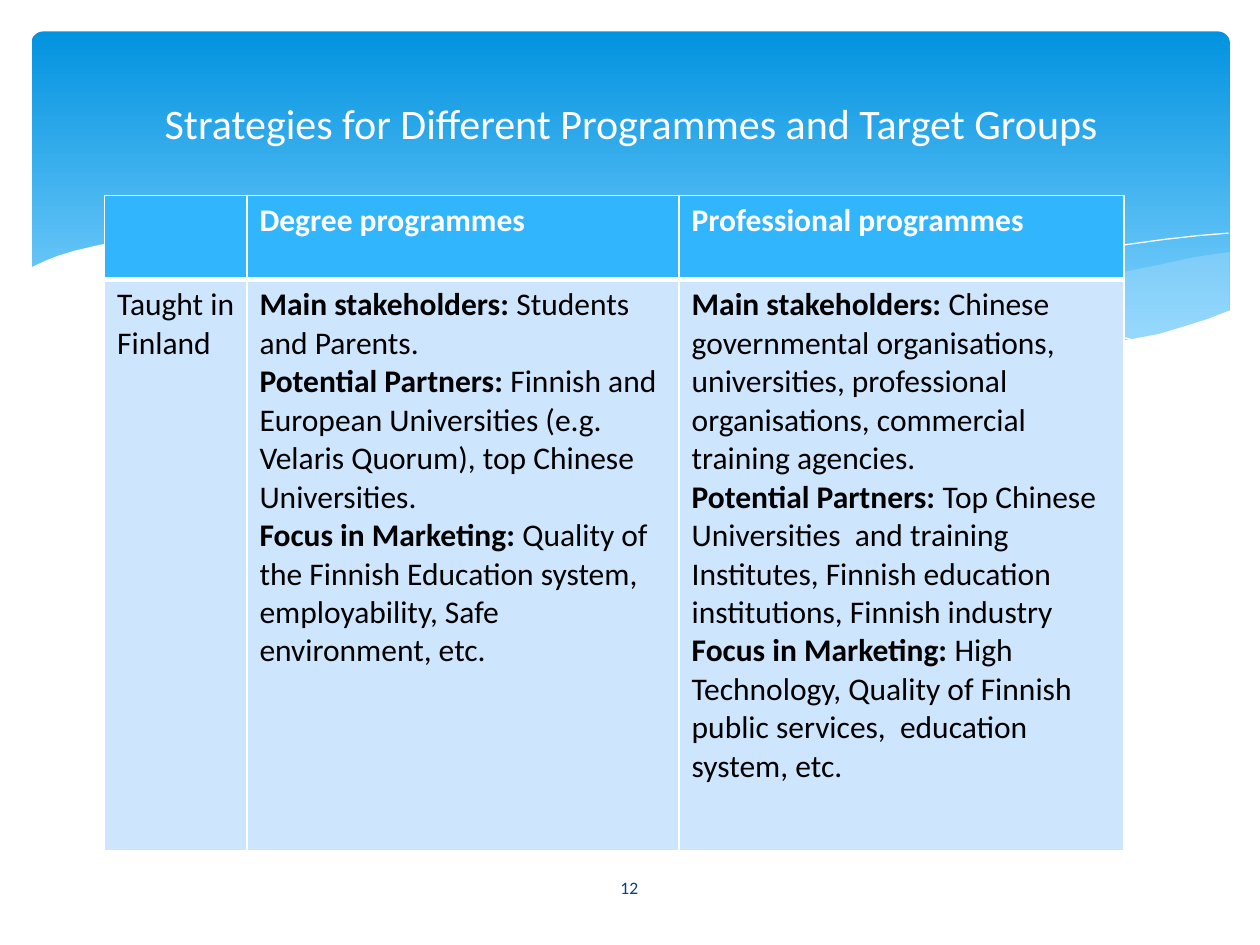
import pptx
import pptx.util
import pptx.dml.color
import pptx.enum.shapes
import pptx.enum.text
import pptx.oxml
import pptx.oxml.ns
from pptx.util import Inches, Pt

COLORS = {
    "white": "FFFFFF", "black": "000000", "navy": "073E87", "header": "31B6FD",
    "body": "CEE5FE", "wave": "C6E7FC", "top": "0293E0", "bottom": "83D3FE",
}
TITLE = "Strategies for Different Programmes and Target Groups"
PAGE_NUMBER = "12"

# Each cell is a list of paragraphs: (bold label, plain text)
ROWS = [
    [[], [("Degree programmes", "")], [("Professional programmes", "")]],
    [
        [("", "Taught in Finland")],
        [
            ("Main stakeholders: ", "Students and Parents."),
            ("Potential Partners: ", "Finnish and European Universities (e.g."),
            ("", "Velaris Quorum), top Chinese"),
            ("", "Universities."),
            ("Focus in Marketing: ", "Quality of the Finnish Education system, "
             "employability, Safe environment, etc."),
        ],
        [
            ("Main stakeholders: ", "Chinese governmental organisations, universities, "
             "professional organisations, commercial training agencies."),
            ("Potential Partners: ", "Top Chinese Universities  and training Institutes, "
             "Finnish education institutions, Finnish industry"),
            ("Focus in Marketing: ", "High Technology, Quality of Finnish"),
            ("", "public services,  education system, etc."),
        ],
    ],
]
ROW_STYLES = [  # borders in points: left, right, top, bottom
    {"fill": "header", "text": "white", "borders": (1, 1, 1, 3)},
    {"fill": "body", "text": "black", "borders": (1, 1, 1, 1)},
]
COL_WIDTHS = [1.13, 3.43, 3.53]
ROW_HEIGHTS = [0.67, 4.53]

# Waves from back to front: a fill with opacity in percent, or a hairline
WAVES = [
    {"fill": "wave", "opacity": 29, "points": [
        (9.76, 2), (9.48, 2.04), (9.21, 2.1), (8.91, 2.16), (8.61, 2.23), (8.05, 2.37),
        (7.53, 2.48), (7.06, 2.57), (6.61, 2.65), (6.91, 2.69), (7.32, 2.74),
        (7.69, 2.77), (8.03, 2.78), (8.35, 2.77), (8.63, 2.75), (8.89, 2.72),
        (9.13, 2.67), (9.35, 2.62), (9.49, 2.57), (9.63, 2.52), (9.76, 2.47)]},
    {"fill": "wave", "opacity": 40, "points": [
        (8.93, 2.73), (8.66, 2.69), (8.07, 2.6), (7.41, 2.47), (6.68, 2.31),
        (6.29, 2.22), (5.84, 2.11), (5.41, 2.03), (5.02, 1.96), (4.65, 1.91),
        (4.2, 1.87), (3.8, 1.85), (3.44, 1.86), (3.13, 1.88), (2.86, 1.91),
        (3.23, 1.96), (3.62, 2.03), (4.04, 2.11), (4.49, 2.22), (5.3, 2.4),
        (5.84, 2.52), (6.34, 2.61), (6.8, 2.68), (7.22, 2.74), (7.61, 2.77),
        (7.96, 2.78), (8.28, 2.78), (8.57, 2.77)]},
    {"points": [
        (3.09, 1.95), (3.28, 1.92), (3.53, 1.89), (3.87, 1.87), (4.16, 1.87),
        (4.5, 1.88), (4.89, 1.9), (5.33, 1.94), (5.82, 2), (6.36, 2.08),
        (6.95, 2.19), (7.6, 2.33), (8.31, 2.51), (9.07, 2.72)]},
    {"points": [
        (6.13, 2.57), (6.53, 2.46), (6.95, 2.35), (7.48, 2.23), (8.06, 2.1),
        (8.66, 1.99), (8.95, 1.94), (9.24, 1.9), (9.51, 1.87), (9.75, 1.85)]},
    {"fill": "white", "opacity": 100, "points": [
        (9.77, 2.46), (9.59, 2.53), (9.4, 2.59), (9.2, 2.65), (8.99, 2.69),
        (8.75, 2.73), (8.5, 2.75), (8.23, 2.77), (7.93, 2.76), (7.61, 2.75),
        (7.26, 2.72), (6.88, 2.68), (6.48, 2.62), (6.03, 2.54), (5.55, 2.45),
        (5.03, 2.33), (4.47, 2.2), (3.91, 2.07), (3.4, 1.97), (2.92, 1.9),
        (2.5, 1.86), (2.11, 1.84), (1.77, 1.84), (1.46, 1.85), (1.19, 1.87),
        (0.95, 1.91), (0.76, 1.95), (0.59, 1.99), (0.46, 2.03), (0.36, 2.07),
        (0.23, 2.13), (0.23, 3.29), (9.77, 3.29)]},
]


def rgb(name):
    return pptx.dml.color.RGBColor.from_string(COLORS[name])


def add_run(p, text, color, **fmt):
    r = p.add_run()
    r.text = text
    r.font.color.rgb = rgb(color)
    for key, value in {"name": "Calibri", "bold": False, **fmt}.items():
        setattr(r.font, key, value)


def add_banner(shapes):
    sp = shapes.add_shape(pptx.enum.shapes.MSO_SHAPE.ROUNDED_RECTANGLE,
                          Inches(0.25), Inches(0.25), Inches(9.51), Inches(2.7))
    sp.adjustments[0] = 0.034
    sp.shadow.inherit = False
    sp.line.fill.background()
    sp.fill.gradient()
    sp.fill.gradient_angle = 270
    for stop, color, position in zip(sp.fill.gradient_stops, ("top", "bottom"), (0, 0.9)):
        stop.color.rgb = rgb(color)
        stop.position = position


def add_wave(shapes, wave):
    filled = "fill" in wave
    start, *rest = [(Inches(x), Inches(y)) for x, y in wave["points"]]
    builder = shapes.build_freeform(*start)
    builder.add_line_segments(rest, close=filled)
    sp = builder.convert_to_shape()
    sp.shadow.inherit = False
    if not filled:
        sp.fill.background()
        sp.line.color.rgb = rgb("white")
        sp.line.width = Pt(0)
        return
    sp.line.fill.background()
    sp.fill.solid()
    sp.fill.fore_color.rgb = rgb(wave["fill"])
    if wave["opacity"] < 100:
        color = sp._element.spPr.find(".//" + pptx.oxml.ns.qn("a:srgbClr"))
        color.append(pptx.oxml.parse_xml(
            f'<a:alpha {pptx.oxml.ns.nsdecls("a")} val="{wave["opacity"] * 1000}"/>'))


def set_borders(cell, widths):
    """Put white lines on the left, right, top and bottom, ahead of the cell's fill."""
    tc_pr = cell._tc.get_or_add_tcPr()
    for i, (side, width) in enumerate(zip("LRTB", widths)):
        tc_pr.insert(i, pptx.oxml.parse_xml(
            f'<a:ln{side} {pptx.oxml.ns.nsdecls("a")} w="{Pt(width)}"><a:solidFill>'
            f'<a:srgbClr val="{COLORS["white"]}"/></a:solidFill></a:ln{side}>'))


def add_strategy_table(shapes):
    table = shapes.add_table(len(ROWS), len(COL_WIDTHS), Inches(0.83), Inches(1.55),
                             Inches(sum(COL_WIDTHS)), Inches(sum(ROW_HEIGHTS))).table
    for col, width in zip(table.columns, COL_WIDTHS):
        col.width = Inches(width)
    for row, height, contents, style in zip(table.rows, ROW_HEIGHTS, ROWS, ROW_STYLES):
        row.height = Inches(height)
        for cell, paragraphs in zip(row.cells, contents):
            cell.fill.solid()
            cell.fill.fore_color.rgb = rgb(style["fill"])
            set_borders(cell, style["borders"])
            tf = cell.text_frame
            for i, (label, text) in enumerate(paragraphs):
                p = tf.add_paragraph() if i else tf.paragraphs[0]
                for part, bold in ((label, True), (text, False)):
                    if part:
                        add_run(p, part, style["text"], size=Pt(18), bold=bold)


def place_line(sp, box, text, color, size):
    """Position a shape and give it one centred line of text."""
    for key, value in zip(("left", "top", "width", "height"), box):
        setattr(sp, key, Inches(value))
    tf = sp.text_frame
    tf.word_wrap = True
    tf.vertical_anchor = pptx.enum.text.MSO_ANCHOR.MIDDLE
    p = tf.paragraphs[0]
    p.alignment = pptx.enum.text.PP_ALIGN.CENTER
    add_run(p, text, color, size=Pt(size))


def main():
    prs = pptx.Presentation()
    prs.slide_width, prs.slide_height = Inches(10), Inches(7.5)
    s = prs.slides.add_slide(prs.slide_layouts[5])
    add_banner(s.shapes)
    for wave in WAVES:
        add_wave(s.shapes, wave)
    add_strategy_table(s.shapes)
    number = s.shapes.add_textbox(0, 0, 0, 0)
    place_line(number, (4.36, 6.84, 1.27, 0.4), PAGE_NUMBER, "navy", 10)
    title = s.shapes.title
    place_line(title, (0.51, 0.29, 9, 1.37), TITLE, "white", 24)
    title._element.getparent().append(title._element)  # bring in front of the banner
    prs.save("out.pptx")


if __name__ == "__main__":
    main()
